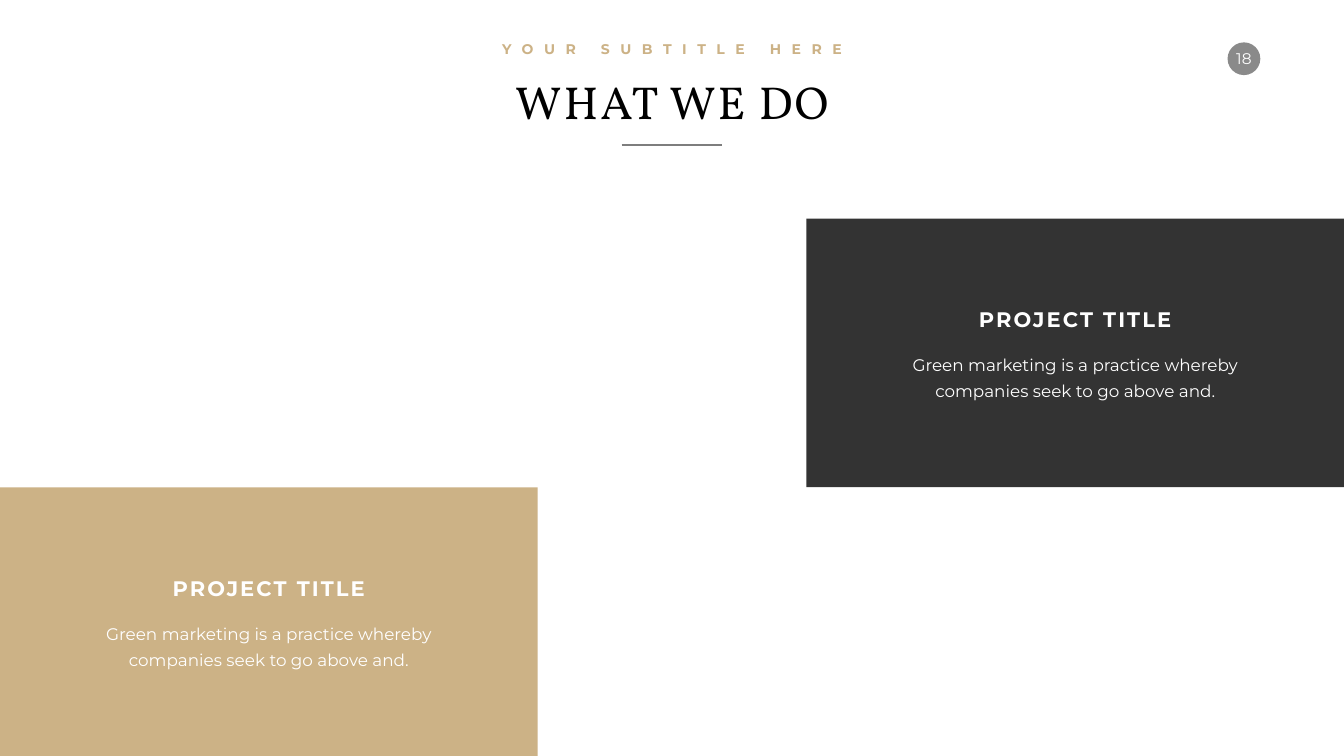
from pptx import Presentation
from pptx.dml.color import RGBColor
from pptx.enum.shapes import MSO_CONNECTOR, MSO_SHAPE
from pptx.enum.text import MSO_ANCHOR, PP_ALIGN
from pptx.oxml.ns import qn
from pptx.util import Inches, Pt
from lxml.etree import SubElement

WIDTH, HEIGHT = 26.66, 15
COLUMN = WIDTH / 5
ROW = COLUMN
CENTER = WIDTH / 2

WHITE = RGBColor(0xFF, 0xFF, 0xFF)
BLACK = RGBColor(0x00, 0x00, 0x00)
GOLD = RGBColor(0xCC, 0xB2, 0x86)
CHARCOAL = RGBColor(0x33, 0x33, 0x33)
BADGE_GRAY = RGBColor(0x8A, 0x8A, 0x8A)
RULE_GRAY = RGBColor(0x7E, 0x7E, 0x7E)

SUBTITLE = {"name": "Montserrat", "size": Pt(20), "bold": True}
TITLE = {"name": "Vollkorn", "size": Pt(66)}
HEADING = {"name": "Montserrat", "size": Pt(30), "bold": True}
BODY = {"name": "Montserrat", "size": Pt(24)}
NUMBER = {"name": "Montserrat", "size": Pt(22)}


def set_attributes(target, values):
    for name, value in values.items():
        setattr(target, name, value)


def add_run(paragraph, text, font_format, color, spacing=0):
    run = paragraph.add_run()
    run.text = text
    set_attributes(run.font, font_format)
    run.font.color.rgb = color
    if spacing:
        run.font._element.set("spc", str(spacing * 100))


def add_filled_shape(slide, kind, left, top, width, height, color):
    shape = slide.shapes.add_shape(
        kind, Inches(left), Inches(top), Inches(width), Inches(height))
    shape.shadow.inherit = False
    shape.fill.solid()
    shape.fill.fore_color.rgb = color
    shape.line.fill.background()
    return shape


def add_centered_text(slide, center, top, width, height, runs, wrap=False, **paragraph_format):
    shape = slide.shapes.add_textbox(
        Inches(center - width / 2), Inches(top), Inches(width), Inches(height))
    shape.text_frame.word_wrap = wrap
    paragraph = shape.text_frame.paragraphs[0]
    set_attributes(paragraph, {"alignment": PP_ALIGN.CENTER, **paragraph_format})
    for run in runs:
        add_run(paragraph, *run)


def add_rule(slide, center, top, width):
    connector = slide.shapes.add_connector(
        MSO_CONNECTOR.STRAIGHT, Inches(center - width / 2), Inches(top),
        Inches(center + width / 2), Inches(top))
    connector.line.color.rgb = RULE_GRAY
    connector.line.width = Pt(3)
    SubElement(connector._element.spPr, qn("a:effectLst"))


def add_page_number(slide, number):
    badge = add_filled_shape(slide, MSO_SHAPE.OVAL, 24.35, 0.84, 0.65, 0.65, BADGE_GRAY)
    set_attributes(badge.text_frame, {
        "margin_left": 0, "margin_right": 0, "margin_top": 0, "margin_bottom": 0,
        "word_wrap": False, "vertical_anchor": MSO_ANCHOR.MIDDLE})
    paragraph = badge.text_frame.paragraphs[0]
    paragraph.alignment = PP_ALIGN.CENTER
    add_run(paragraph, number, NUMBER, WHITE)


def add_header(slide):
    add_centered_text(slide, CENTER, 1.4, 6.82, 1.21, [("WHAT WE DO", TITLE, BLACK, 3)])
    add_centered_text(slide, CENTER, 0.76, 7.17, 0.44, [
        ("YOUR SUBTITLE HER", SUBTITLE, GOLD, 15), ("E", SUBTITLE, GOLD)], space_before=Pt(4))
    add_rule(slide, CENTER, 2.88, 2)


def add_project(slide, column, row, color):
    left = column * COLUMN
    top = HEIGHT - (2 - row) * ROW
    center = left + COLUMN
    add_filled_shape(slide, MSO_SHAPE.RECTANGLE, left, top, 2 * COLUMN, ROW, color)
    add_centered_text(
        slide, center, top + 2.54, 6.66, 1.09,
        [("Green marketing is a practice whereby companies seek to go above and.", BODY, WHITE)],
        wrap=True, line_spacing=Pt(37))
    add_centered_text(slide, center, top + 1.7, 4.11, 0.61,
                      [("PROJECT TITLE", HEADING, WHITE, 3)])


def main():
    presentation = Presentation()
    set_attributes(presentation, {"slide_width": Inches(WIDTH), "slide_height": Inches(HEIGHT)})
    slide = presentation.slides.add_slide(presentation.slide_layouts[6])
    add_page_number(slide, "18")
    add_header(slide)
    add_project(slide, 3, 0, CHARCOAL)
    add_project(slide, 0, 1, GOLD)
    presentation.save("out.pptx")


if __name__ == "__main__":
    main()
